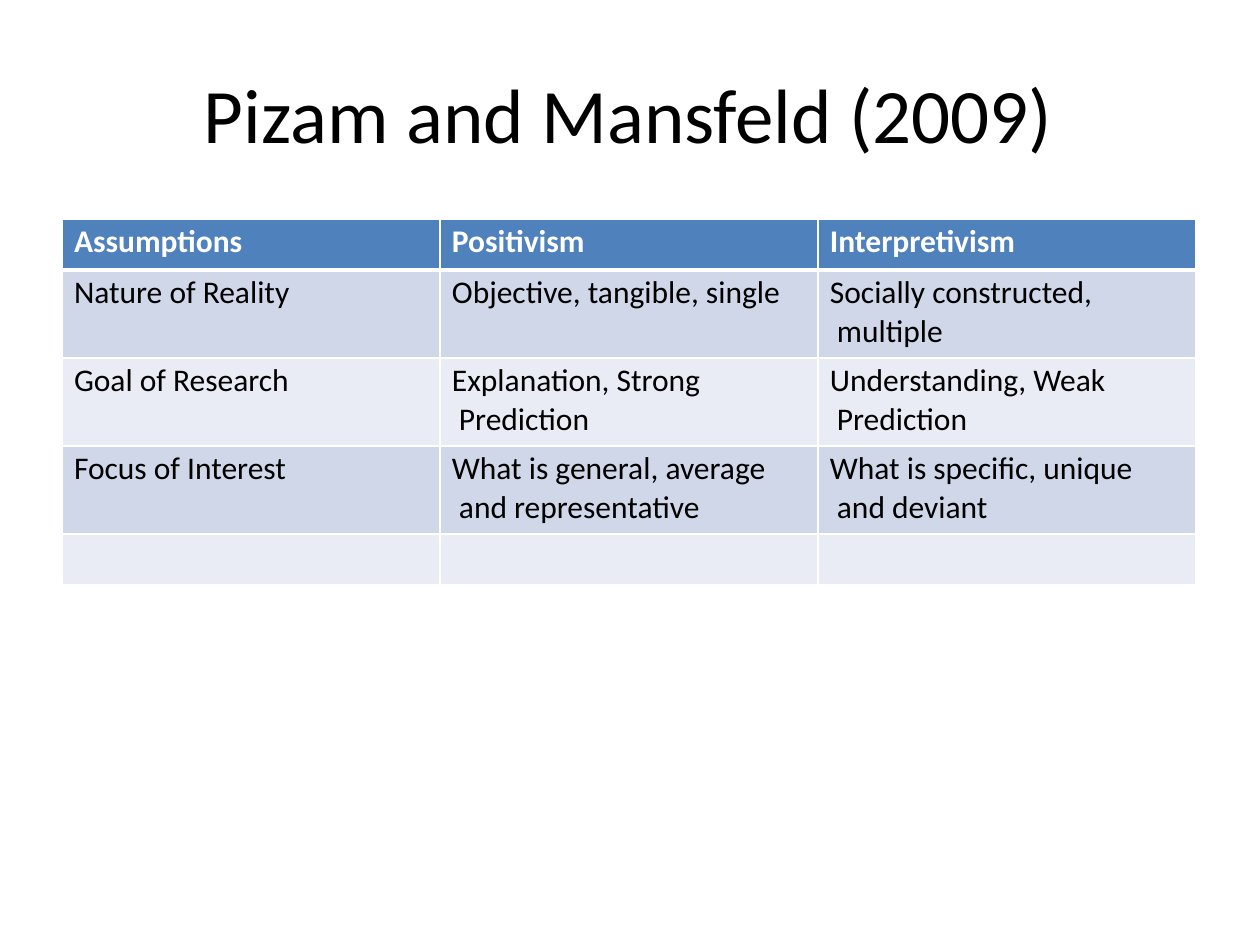
"""Builds a slide with a title and a table comparing positivism and interpretivism."""
from pptx import Presentation
from pptx.dml.color import RGBColor as RGB
from pptx.oxml import parse_xml
from pptx.oxml.ns import nsdecls
from pptx.util import Emu, Pt

PX = 914400 // 126
C = {"header": "4F81BC", "odd": "D0D7E8", "even": "E9ECF4", "white": "FFFFFF", "black": "000000"}
ROWS = [
    ("Assumptions", "Positivism", "Interpretivism"),
    ("Nature of Reality", "Objective, tangible, single", "Socially constructed,\vmultiple"),
    ("Goal of Research", "Explanation, Strong\vPrediction", "Understanding, Weak\vPrediction"),
    ("Focus of Interest", "What is general, average\vand representative",
     "What is specific, unique\vand deviant"),
    ("", "", ""),
]
HEIGHTS = [51, 88, 88, 88, 51]
COL_W, INDENT, HANG = 378, 12, 7


def px(n):
    return Emu(n * PX)


def style(p, size, color, bold=False):
    f = p.font
    f.name, f.size, f.bold = "Calibri", Pt(size), bold
    f.color.rgb = RGB.from_string(C[color])


prs = Presentation()
prs.slide_width, prs.slide_height = px(1260), px(945)
s = prs.slides.add_slide(prs.slide_layouts[6])

tf = s.shapes.add_textbox(px(204), px(64), px(853), px(96)).text_frame
tf.margin_left = tf.margin_right = tf.margin_bottom = 0
tf.margin_top = px(3)
p = tf.paragraphs[0]
p.text = "Pizam and Mansfeld (2009)"
style(p, 44, "black")

table = s.shapes.add_table(len(ROWS), 3, px(62), px(219), px(3 * COL_W), px(sum(HEIGHTS))).table
for col in table.columns:
    col.width = px(COL_W)

for i, (texts, height) in enumerate(zip(ROWS, HEIGHTS)):
    table.rows[i].height = px(height)
    fill = "header" if i == 0 else "odd" if i % 2 else "even"
    for j, text in enumerate(texts):
        cell = table.cell(i, j)
        cell.margin_left = cell.margin_right = cell.margin_bottom = 0
        cell.margin_top = px(4)
        p = cell.text_frame.paragraphs[0]
        p.text = text
        pPr = p._p.get_or_add_pPr()
        pPr.set("marL", str(px(INDENT + HANG)))
        pPr.set("indent", str(px(-HANG)))
        style(p, 18, "black" if i else "white", i == 0)
        tcPr = cell._tc.get_or_add_tcPr()
        for side in "LRTB":
            thick = (i, side) in ((0, "B"), (1, "T"))
            tcPr.append(parse_xml(
                f'<a:ln{side} {nsdecls("a")} w="{Pt(3 if thick else 1)}"><a:solidFill>'
                f'<a:srgbClr val="{C["white"]}"/></a:solidFill></a:ln{side}>'))
        cell.fill.solid()
        cell.fill.fore_color.rgb = RGB.from_string(C[fill])

prs.save("out.pptx")
